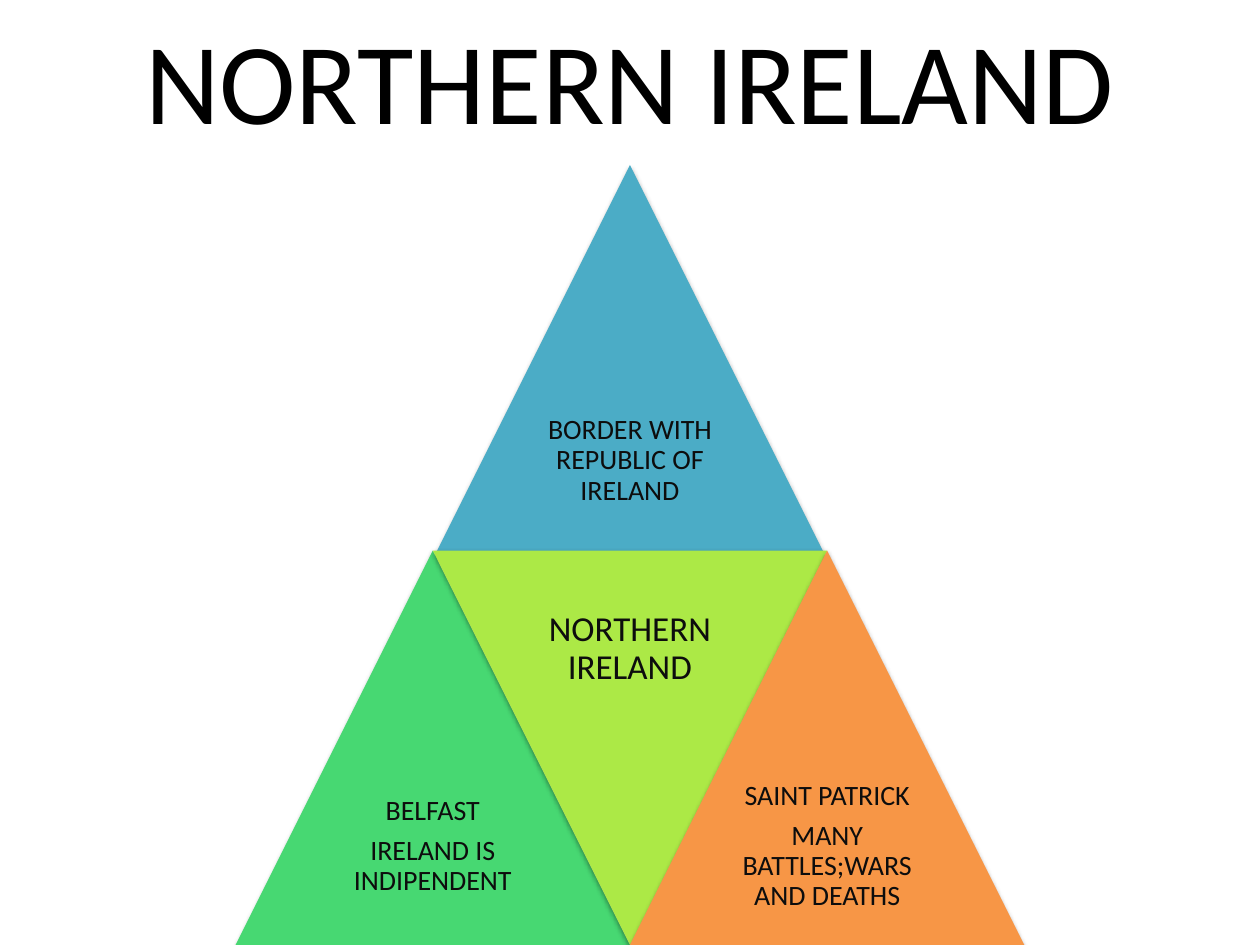
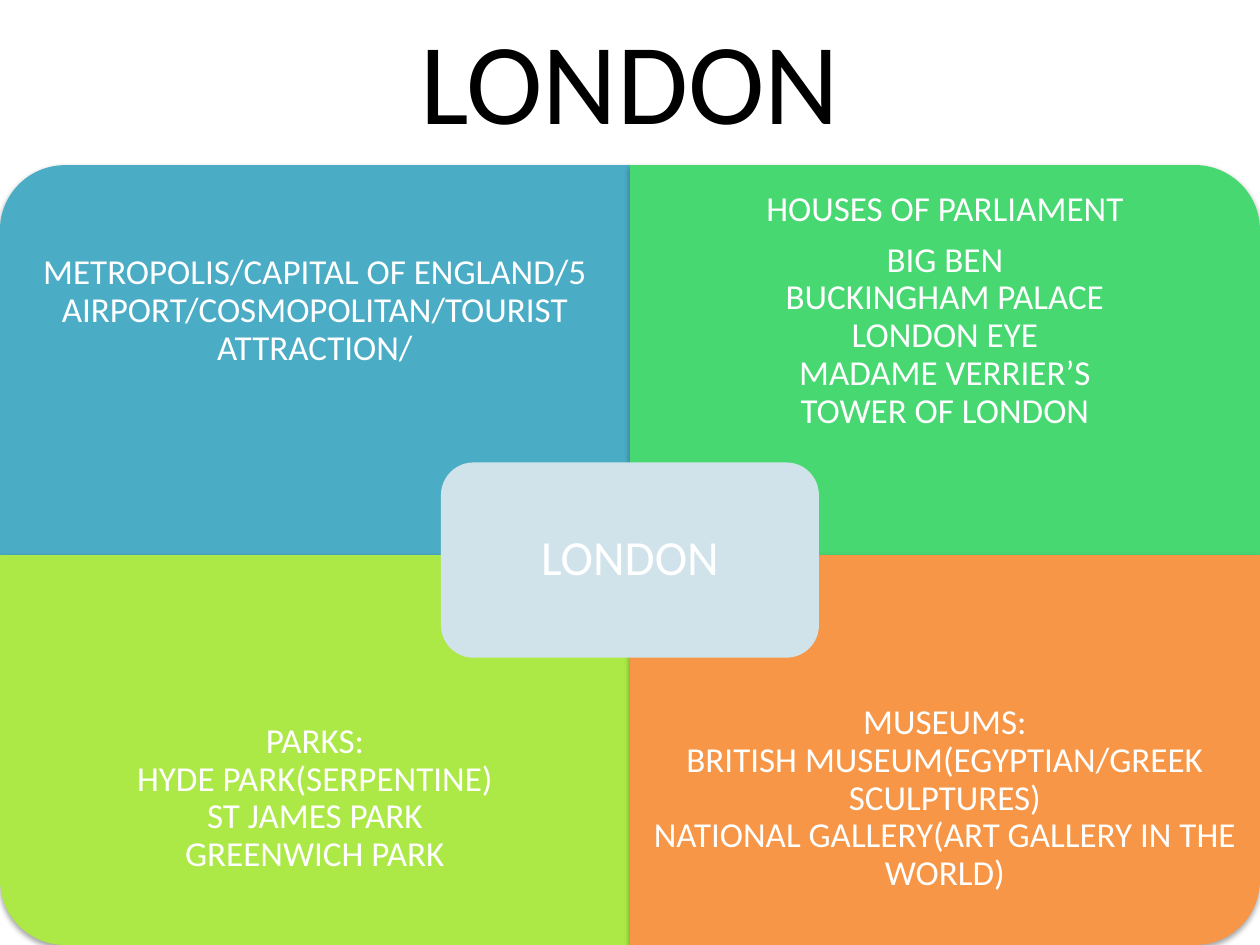
from lxml import etree
from pptx import Presentation
from pptx.dml.color import RGBColor
from pptx.enum.shapes import MSO_SHAPE
from pptx.enum.text import MSO_ANCHOR, PP_ALIGN
from pptx.oxml.ns import qn
from pptx.util import Inches, Pt

TRIANGLE = MSO_SHAPE.ISOSCELES_TRIANGLE
ONE_ROUND_CORNER = MSO_SHAPE.ROUND_1_RECTANGLE
ROUNDED = MSO_SHAPE.ROUNDED_RECTANGLE
MIDDLE = MSO_ANCHOR.MIDDLE
CENTER = PP_ALIGN.CENTER

BLUE, GREEN, LIME, ORANGE = "4BACC6", "47D872", "ACE946", "F79646"
PALE_BLUE, BLACK, DARK, WHITE = "D0E3EA", "000000", "0D0D0D", "FFFFFF"
WIDTH, HEIGHT = 10, 7.5
DIAGRAM_TOP = 1.31


def color(value):
    return RGBColor.from_string(value)


def apply_format(target, values):
    for name, value in values.items():
        setattr(target, name, value)


class DiagramDeck:
    font_name = "Calibri"
    blank_layout = 6

    def __init__(self):
        self.deck = Presentation()
        apply_format(self.deck, {"slide_width": Inches(WIDTH), "slide_height": Inches(HEIGHT)})
        self.page = None

    def add_page(self, title):
        self.page = self.deck.slides.add_slide(self.deck.slide_layouts[self.blank_layout])
        self.add_text([title], 0, 0, WIDTH, 1.25, 66, BLACK, spacing=1, gap=0)

    def fill_text(self, shape, paragraphs, size, text_color, inset=0.1, spacing=0.9, gap=0.35):
        frame = shape.text_frame
        margins = {f"margin_{side}": Inches(inset) for side in ("left", "top", "right", "bottom")}
        apply_format(frame, {"word_wrap": True, "vertical_anchor": MIDDLE, **margins})
        for index, text in enumerate(paragraphs):
            para = frame.add_paragraph() if index else frame.paragraphs[0]
            para.text = text
            apply_format(para, {
                "alignment": CENTER,
                "line_spacing": spacing,
                "space_after": Pt(size * gap),
            })
            for span in para.runs:
                apply_format(span.font, {"name": self.font_name, "size": Pt(size)})
                span.font.color.rgb = color(text_color)

    def add_text(self, paragraphs, left, top, width, height, size, text_color, **layout):
        box = self.page.shapes.add_textbox(*map(Inches, (left, top, width, height)))
        self.fill_text(box, paragraphs, size, text_color, **layout)

    def add_shape(self, kind, left, top, width, height, fill, rotation=0):
        shape = self.page.shapes.add_shape(kind, *map(Inches, (left, top, width, height)))
        shape.rotation = rotation
        shape.fill.solid()
        shape.fill.fore_color.rgb = color(fill)
        shape.line.fill.background()
        shape.shadow.inherit = False
        return shape

    def add_shadow(self, shape, distance, opacity):
        effects = shape.element.spPr.find(qn("a:effectLst"))
        shadow = etree.SubElement(effects, qn("a:outerShdw"), {
            "blurRad": str(Pt(3.1)),
            "dist": str(Pt(distance)),
            "dir": "5400000",
            "rotWithShape": "0",
        })
        tint = etree.SubElement(shadow, qn("a:srgbClr"), val=BLACK)
        etree.SubElement(tint, qn("a:alpha"), val=str(opacity * 1000))

    def save(self):
        self.deck.save("out.pptx")


def build_northern_ireland(deck):
    deck.add_page("NORTHERN IRELAND")
    side = 3.13
    half = side / 2
    middle, base_top = WIDTH / 2, HEIGHT - side
    triangles = [
        (middle, DIAGRAM_TOP, 0, BLUE, 16, ["BORDER WITH REPUBLIC OF IRELAND"]),
        (middle - half, base_top, 0, GREEN, 16, ["BELFAST", "IRELAND IS INDIPENDENT"]),
        (middle, base_top, 180, LIME, 20, ["NORTHERN IRELAND"]),
        (middle + half, base_top, 0, ORANGE, 16,
         ["SAINT PATRICK", "MANY BATTLES;WARS AND DEATHS"]),
    ]
    for center, top, rotation, fill, size, paragraphs in triangles:
        triangle = deck.add_shape(TRIANGLE, center - half, top, side, side, fill, rotation)
        deck.add_shadow(triangle, 1.6, 38)
        text_top = top if rotation else top + half
        deck.add_text(paragraphs, center - half / 2, text_top, half, half, size, DARK,
                      inset=size / 240)


def build_london(deck):
    deck.add_page("LONDON")
    width, height = WIDTH / 2, (HEIGHT - DIAGRAM_TOP) / 2
    text_height = height * 0.75
    quadrants = [
        (0, 0, 270, BLUE,
         ["METROPOLIS/CAPITAL OF ENGLAND/5 AIRPORT/COSMOPOLITAN/TOURIST ATTRACTION/"]),
        (1, 0, 0, GREEN,
         ["HOUSES OF PARLIAMENT",
          "BIG BEN\nBUCKINGHAM PALACE\nLONDON EYE\nMADAME VERRIER’S\nTOWER OF LONDON"]),
        (0, 1, 180, LIME,
         ["PARKS:\nHYDE PARK(SERPENTINE)\nST JAMES PARK\nGREENWICH PARK"]),
        (1, 1, 90, ORANGE,
         ["MUSEUMS:\nBRITISH MUSEUM(EGYPTIAN/GREEK SCULPTURES)\n"
          "NATIONAL GALLERY(ART GALLERY IN THE WORLD)"]),
    ]
    for column, row, rotation, fill, paragraphs in quadrants:
        left, top = column * width, DIAGRAM_TOP + row * height
        across, down = (height, width) if rotation % 180 else (width, height)
        quadrant = deck.add_shape(
            ONE_ROUND_CORNER, left + (width - across) / 2, top + (height - down) / 2,
            across, down, fill, rotation)
        deck.add_shadow(quadrant, 1.8, 35)
        text_top = top + row * (height - text_height)
        deck.add_text(paragraphs, left, text_top, width, text_height, 20, WHITE, inset=0.16)
    hub = deck.add_shape(ROUNDED, 3.5, 3.67, 3, 1.55, PALE_BLUE)
    deck.fill_text(hub, ["LONDON"], 28, WHITE)


def main():
    deck = DiagramDeck()
    build_northern_ireland(deck)
    build_london(deck)
    deck.save()


if __name__ == "__main__":
    main()
